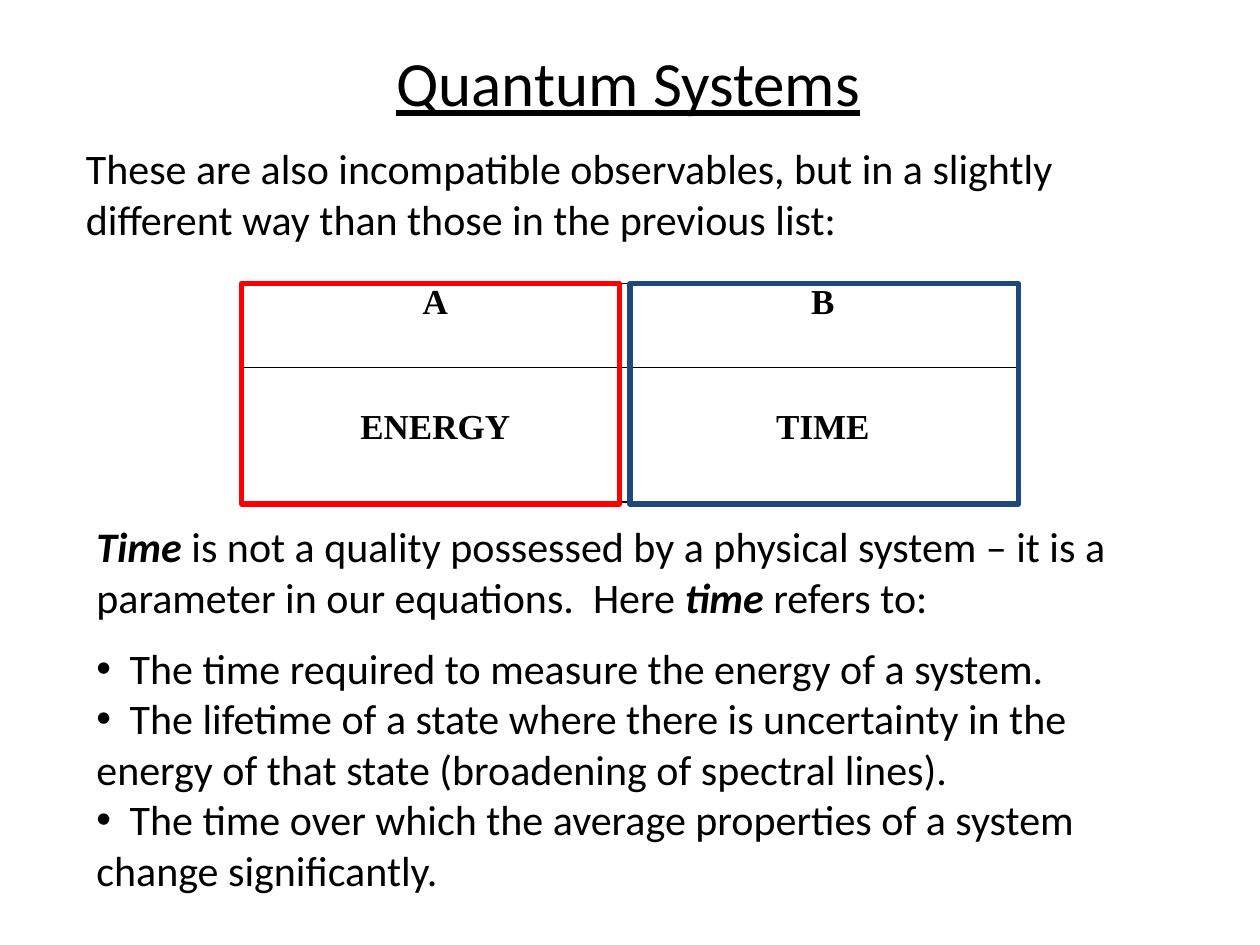
from dataclasses import dataclass

from lxml import etree
from pptx import Presentation
from pptx import util as u
from pptx.dml import color
from pptx.enum import shapes, text
from pptx.oxml import ns


@dataclass(frozen=True)
class Theme:
    """Colours, fonts and type sizes of the slide."""
    ink: str = "000000"
    red: str = "FF0000"
    blue: str = "1F497D"
    body_font: str = "Calibri"
    table_font: str = "Times New Roman"
    title_size: int = 36
    body_size: int = 24
    table_size: int = 20


THEME = Theme()
TABLE_LEFT, TABLE_TOP = 138, 162
COLUMN_WIDTH = 221.5
ROW_HEIGHTS = (48, 77)
ROW_TOP_MARGINS = (0, 23)
PAIRS = (("A", "B"), ("ENERGY", "TIME"))
INTRO = ("These are also incompatible observables, but in a slightly "
         "different way than those in the previous list:")
TIME_NOTE = (
    ("Time", True),
    (" is not a quality possessed by a physical system – it is a parameter in our equations.  Here ", False),
    ("time", True),
    (" refers to:", False),
)
MEANINGS = (
    "The time required to measure the energy of a system.",
    "The lifetime of a state where there is uncertainty in the "
    "energy of that state (broadening of spectral lines).",
    "The time over which the average properties of a system change significantly.",
)


def style_runs(paragraph, size, font=THEME.body_font):
    """Give every run of a paragraph its font, size and colour."""
    for run in paragraph.runs:
        run.font.name = font
        run.font.size = u.Pt(size)
        run.font.color.rgb = color.RGBColor.from_string(THEME.ink)


def place_title(slide, title):
    """Move, fill and format the title placeholder."""
    shape = slide.shapes.title
    shape.left, shape.top, shape.width, shape.height = map(u.Pt, (214, 21, 290, 51))
    frame = shape.text_frame
    frame.text = title
    frame.auto_size = text.MSO_AUTO_SIZE.NONE
    frame.word_wrap = False
    paragraph = frame.paragraphs[0]
    style_runs(paragraph, THEME.title_size)
    paragraph.runs[0].font.underline = True


def add_text(slide, left, top, width, height):
    """Add a wrapping text box and return its text frame."""
    frame = slide.shapes.add_textbox(*map(u.Pt, (left, top, width, height))).text_frame
    frame.word_wrap = True
    return frame


def add_bullet(frame, wording):
    """Append a bullet whose wrapped lines return to the left edge."""
    paragraph = frame.add_paragraph()
    paragraph.text = "\t" + wording
    style_runs(paragraph, THEME.body_size)
    properties = paragraph._p.get_or_add_pPr()
    properties.set("marL", "0")
    properties.set("indent", "0")
    etree.SubElement(properties, ns.qn("a:buFont"), typeface="Arial")
    etree.SubElement(properties, ns.qn("a:buChar"), char="•")
    tabs = etree.SubElement(properties, ns.qn("a:tabLst"))
    etree.SubElement(tabs, ns.qn("a:tab"), pos=str(u.Pt(19)), algn="l")


def add_time_note(slide):
    """Add the explanation of time with its bulleted meanings."""
    frame = add_text(slide, 48, 294, 636, 223)
    paragraph = frame.paragraphs[0]
    for wording, emphasis in TIME_NOTE:
        run = paragraph.add_run()
        run.text = wording
        run.font.bold = run.font.italic = emphasis
    style_runs(paragraph, THEME.body_size)
    paragraph.space_after = u.Pt(12)
    for meaning in MEANINGS:
        add_bullet(frame, meaning)


def border_cell(cell):
    """Draw a thin line on all four sides of a cell."""
    properties = cell._tc.get_or_add_tcPr()
    for index, side in enumerate(("a:lnL", "a:lnR", "a:lnT", "a:lnB")):
        line = etree.Element(ns.qn(side), w=str(u.Pt(1)))
        fill = etree.SubElement(line, ns.qn("a:solidFill"))
        etree.SubElement(fill, ns.qn("a:srgbClr"), val=THEME.ink)
        properties.insert(index, line)


def fill_cell(cell, wording, top_margin):
    """Write and format one centred table cell."""
    cell.text_frame.text = wording
    cell.margin_left = cell.margin_right = u.Pt(5)
    cell.margin_top, cell.margin_bottom = u.Pt(top_margin), 0
    cell.fill.background()
    paragraph = cell.text_frame.paragraphs[0]
    paragraph.alignment = text.PP_ALIGN.CENTER
    style_runs(paragraph, THEME.table_size, THEME.table_font)
    paragraph.runs[0].font.bold = True
    border_cell(cell)


def add_pairs_table(slide):
    """Add the table of paired observables."""
    size = (2 * COLUMN_WIDTH, sum(ROW_HEIGHTS))
    table = slide.shapes.add_table(2, 2, *map(u.Pt, (TABLE_LEFT, TABLE_TOP, *size))).table
    table.first_row = table.horz_banding = False
    for column in table.columns:
        column.width = u.Pt(COLUMN_WIDTH)
    for row, height, margin, pair in zip(table.rows, ROW_HEIGHTS, ROW_TOP_MARGINS, PAIRS):
        row.height = u.Pt(height)
        for cell, wording in zip(row.cells, pair):
            fill_cell(cell, wording, margin)


def add_frame(slide, left, width, line_color):
    """Add an unfilled rectangle around one table column."""
    box = map(u.Pt, (left, TABLE_TOP, width, 126))
    shape = slide.shapes.add_shape(shapes.MSO_SHAPE.RECTANGLE, *box)
    shape.shadow.inherit = False
    shape.fill.background()
    shape.line.color.rgb = color.RGBColor.from_string(line_color)
    shape.line.width = u.Pt(3)


def main():
    """Build the slide and save it."""
    presentation = Presentation()
    presentation.slide_width, presentation.slide_height = u.Pt(720), u.Pt(540)
    slide = presentation.slides.add_slide(presentation.slide_layouts[5])
    place_title(slide, "Quantum Systems")
    intro = add_text(slide, 42, 78, 648, 65)
    intro.text = INTRO
    style_runs(intro.paragraphs[0], THEME.body_size)
    add_time_note(slide)
    add_pairs_table(slide)
    add_frame(slide, TABLE_LEFT, 216, THEME.red)
    add_frame(slide, 360, 222, THEME.blue)
    presentation.save("out.pptx")


if __name__ == "__main__":
    main()
